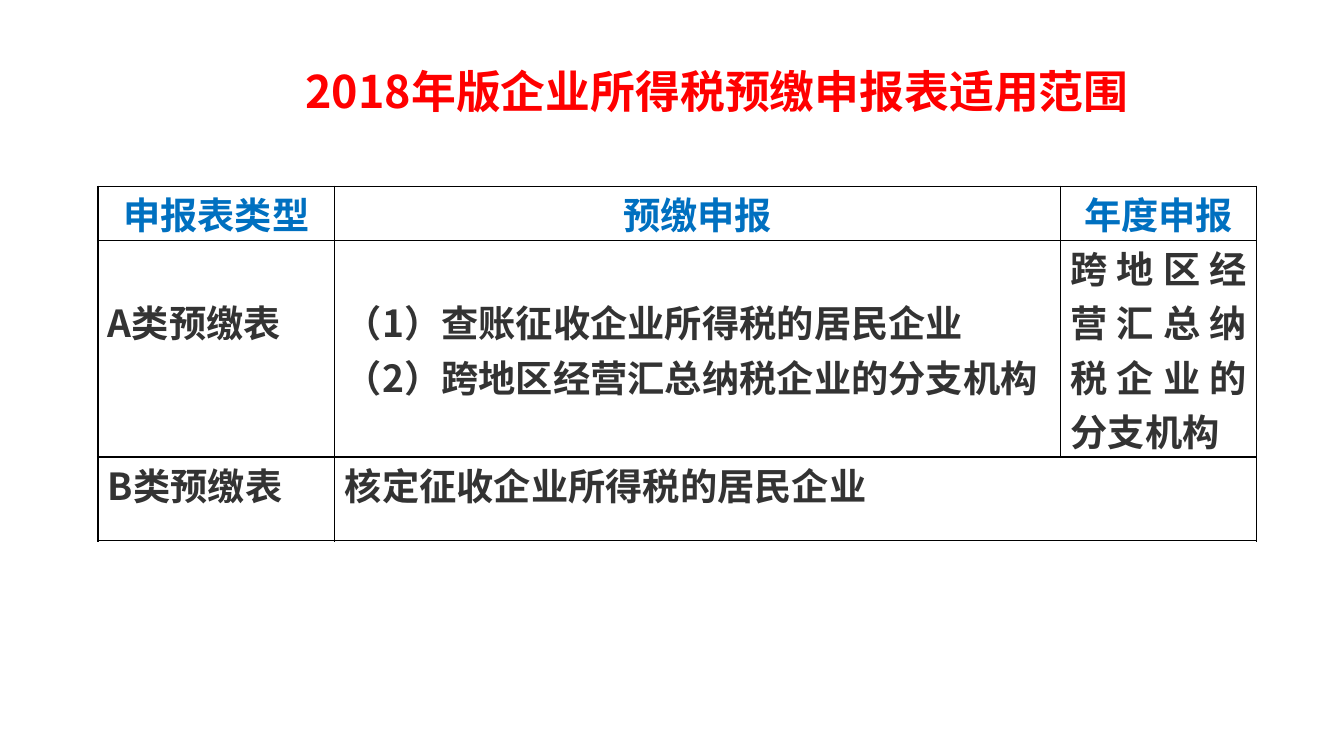
"""Build a slide with a table of which tax prepayment form applies to whom."""
from dataclasses import dataclass

from lxml import etree
from pptx import Presentation
from pptx.dml.color import RGBColor
from pptx.enum.text import MSO_ANCHOR, MSO_AUTO_SIZE, PP_ALIGN
from pptx.oxml.ns import qn
from pptx.util import Emu, Inches, Pt

LEFT, MID, JUST = PP_ALIGN.LEFT, PP_ALIGN.CENTER, PP_ALIGN.JUSTIFY
TOP, GROW = MSO_ANCHOR.TOP, MSO_AUTO_SIZE.SHAPE_TO_FIT_TEXT
WIDE, HIGH = Inches(13.33), Inches(7.5)
LATIN, HAN = "Calibri", "Noto Sans CJK SC"
RED, BLUE, GREY, BLACK = "FF0000", "0070C0", "333333", "000000"
COLS = (17.63, 54.01, 14.6)
ROWS = (7.15, 28.62, 11.07)
THIN, THICK = 1, 1.5
TITLE = "2018年版企业所得税预缴申报表适用范围"


@dataclass(frozen=True)
class Line:
    """One paragraph of text and its look."""
    text: str
    align: PP_ALIGN = LEFT
    font: str = LATIN
    hue: str = GREY
    size: float = 26.6


@dataclass(frozen=True)
class Entry:
    """The lines of one table cell, with its place, span and top gap."""
    row: int
    col: int
    lines: tuple[Line, ...]
    span: int = 1
    gap: float = 0


HEADS = ("申报表类型", "预缴申报", "年度申报")
ENTRIES = (
    *(Entry(0, col, (Line(head, MID, hue=BLUE),)) for col, head in enumerate(HEADS)),
    Entry(1, 0, (Line("A类预缴表", font=HAN),), gap=7.15),
    Entry(1, 1, (Line("（1）查账征收企业所得税的居民企业", JUST, HAN),
                 Line("（2）跨地区经营汇总纳税企业的分支机构", font=HAN)), gap=7.15),
    Entry(1, 2, (Line("跨地区经营汇总纳税企业的分支机构", JUST),)),
    Entry(2, 0, (Line("B类预缴表", font=HAN),)),
    Entry(2, 1, (Line("核定征收企业所得税的居民企业", JUST),), span=2),
)


def across(share: float) -> Emu:
    """Turn a percentage of the slide width into a length."""
    return Emu(round(WIDE * share / 100))


def down(share: float) -> Emu:
    """Turn a percentage of the slide height into a length."""
    return Emu(round(HIGH * share / 100))


def paint(code: str) -> RGBColor:
    """Turn a hex string into a colour."""
    return RGBColor.from_string(code)


def apply(thing: object, form: dict) -> None:
    """Set each format value on an object."""
    for name, value in form.items():
        setattr(thing, name, value)


def write(frame, lines: tuple[Line, ...]) -> None:
    """Fill a text frame with formatted paragraphs."""
    for i, line in enumerate(lines):
        para = frame.add_paragraph() if i else frame.paragraphs[0]
        para.alignment = line.align
        run = para.add_run()
        run.text = line.text
        apply(run.font, {"name": line.font, "size": Pt(line.size), "bold": True})
        run.font.color.rgb = paint(line.hue)
        east = etree.SubElement(run.font._element, qn("a:ea"))
        east.set("typeface", HAN)


def edge(cell, row: int, col: int) -> None:
    """Clear a cell's fill and rule its sides, thicker on the table's rim."""
    cell.fill.background()
    props = cell._tc.get_or_add_tcPr()
    rim = {"a:lnL": col == 0, "a:lnR": False,
           "a:lnT": row == 0, "a:lnB": row == len(ROWS) - 1}
    for i, (side, outer) in enumerate(rim.items()):
        rule = etree.Element(qn(side), w=str(Pt(THICK if outer else THIN)))
        fill = etree.SubElement(rule, qn("a:solidFill"))
        etree.SubElement(fill, qn("a:srgbClr"), val=BLACK)
        props.insert(i, rule)


def add_title(slide) -> None:
    """Place and format the slide title."""
    title = slide.shapes.title
    apply(title, {"left": across(21.68), "top": down(7.73),
                  "width": across(63.39), "height": down(8.53)})
    frame = title.text_frame
    apply(frame, {"word_wrap": True, "vertical_anchor": TOP, "auto_size": GROW})
    write(frame, (Line(TITLE, MID, HAN, RED, 32),))
    frame.paragraphs[0].line_spacing = 1.0


def add_grid(slide) -> None:
    """Draw the table of forms."""
    grid = slide.shapes.add_table(
        len(ROWS), len(COLS), across(7.28), down(24.67),
        across(sum(COLS)), down(sum(ROWS))).table
    apply(grid, {"first_row": False, "horz_banding": False})
    for col, share in zip(grid.columns, COLS):
        col.width = across(share)
    for row, share in zip(grid.rows, ROWS):
        row.height = down(share)
    for i, cell in enumerate(grid.iter_cells()):
        edge(cell, *divmod(i, len(COLS)))
    for entry in ENTRIES:
        cell = grid.cell(entry.row, entry.col)
        if entry.span > 1:
            cell.merge(grid.cell(entry.row, entry.col + entry.span - 1))
        apply(cell, {"margin_left": across(0.75), "margin_right": across(0.75),
                     "margin_top": down(entry.gap), "margin_bottom": 0,
                     "vertical_anchor": TOP})
        write(cell.text_frame, entry.lines)


def main() -> None:
    """Build and save the slide."""
    deck = Presentation()
    apply(deck, {"slide_width": WIDE, "slide_height": HIGH})
    slide = deck.slides.add_slide(deck.slide_layouts[5])
    add_grid(slide)
    add_title(slide)
    deck.save("out.pptx")


if __name__ == "__main__":
    main()
